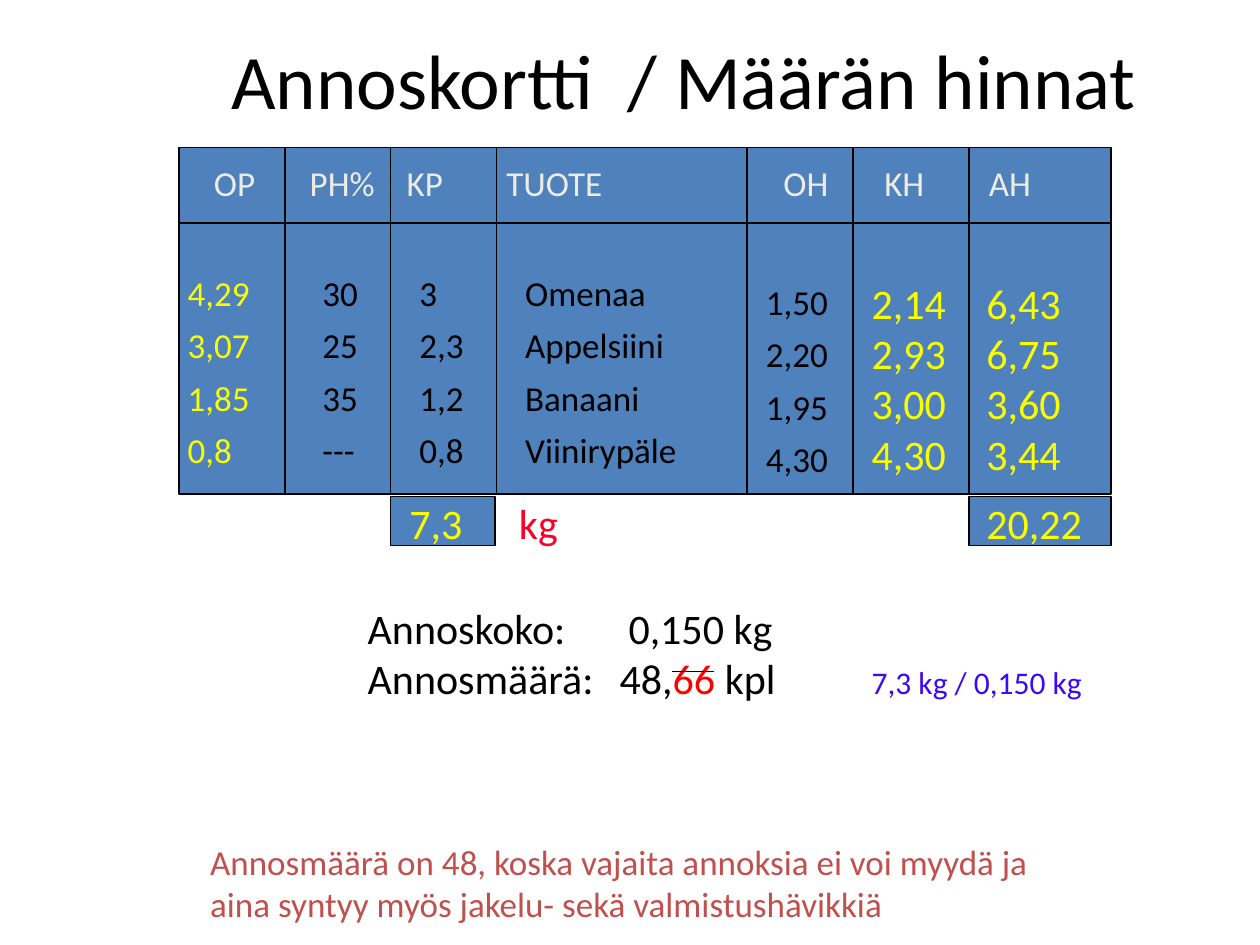
from lxml import etree
from pptx import Presentation
from pptx.dml.color import RGBColor
from pptx.enum import shapes, text
from pptx.oxml.ns import qn
from pptx.util import Inches, Pt

BLACK = RGBColor(0, 0, 0)
BLUE = RGBColor(0x4F, 0x81, 0xBD)
YELLOW = RGBColor(0xFA, 0xFD, 0x00)
CREAM = RGBColor(0xEE, 0xEC, 0xE1)
PINK = RGBColor(0xFC, 0x01, 0x28)
RED = RGBColor(0xFF, 0, 0)
VIOLET = RGBColor(0x3C, 0x09, 0xF5)
BRICK = RGBColor(0xC0, 0x50, 0x4D)

TITLE = "Annoskortti  / Määrän hinnat"
HEADS = ["OP", "PH%", "KP", "TUOTE", "OH", "KH", "AH"]
HEAD_TABS = [0.76, 1.53, 2.32, 4.52, 5.32, 6.15]

# box (left, top, width, height), size, colour, line spacing, values
COLUMNS = [
    ((1.39, 2.02, 0.82, 1.76), 20, YELLOW, 1.25, ["4,29", "3,07", "1,85", "0,8"]),
    ((2.46, 2.02, 0.48, 1.78), 20, BLACK, 1.25, ["30", "25", "35", "---"]),
    ((3.23, 2.02, 0.55, 1.78), 20, BLACK, 1.25, ["3", "2,3", "1,2", "0,8"]),
    ((4.07, 2.02, 1.46, 1.76), 20, BLACK, 1.25,
     ["Omenaa", "Appelsiini", "Banaani", "Viinirypäle"]),
    ((5.98, 2.09, 0.7, 1.75), 20, BLACK, 1.25, ["1,50", "2,20", "1,95", "4,30"]),
    ((6.82, 2.15, 0.79, 1.71), 24, YELLOW, 1, ["2,14", "2,93", "3,00", "4,30"]),
    ((7.73, 2.15, 0.79, 1.71), 24, YELLOW, 1, ["6,43", "6,75", "3,60", "3,44"]),
]
# a line is a string, or a list of (text, colour, size) runs
TOTAL = [[("7,3", YELLOW, 24), ("\tkg", PINK, 24)]]
PORTIONS = [
    "Annoskoko:\t0,150 kg",
    [("Annosmäärä:\t48,", BLACK, 24), ("66", RED, 24), (" kpl\t", BLACK, 24),
     ("7,3 kg / 0,150 kg", VIOLET, 18)],
]
NOTE = ["Annosmäärä on 48, koska vajaita annoksia ei voi myydä ja",
        "aina syntyy myös jakelu- sekä valmistushävikkiä"]

LEFT, TOP, RIGHT, BASE = 1.42, 1.17, 8.82, 3.92
RULES = [2.26, 3.1, 3.94, 5.93, 6.77, 7.69]
SUMS = [(3.1, 0.83), (7.69, 1.13)]

prs = Presentation()
prs.slide_width, prs.slide_height = Inches(10), Inches(7.5)
slide = prs.slides.add_slide(prs.slide_layouts[6])


def style(font, size, color):
    font.name, font.size = "Calibri", Pt(size)
    font.color.rgb = color


def add_tabs(para, stops):
    tabs = etree.SubElement(para._p.get_or_add_pPr(), qn("a:tabLst"))
    for stop in stops:
        etree.SubElement(tabs, qn("a:tab"), pos=str(Inches(stop)), algn="l")


def add_text(box, lines, size, color, space=None, tabs=()):
    """Add a text box; tabs holds one list of stops for each line."""
    shape = slide.shapes.add_textbox(*map(Inches, box))
    frame = shape.text_frame
    frame.word_wrap = bool(tabs)
    for i, line in enumerate(lines):
        para = frame.add_paragraph() if i else frame.paragraphs[0]
        para.line_spacing = space
        if tabs:
            add_tabs(para, tabs[i])
        if isinstance(line, str):
            para.text = line
            style(para.font, size, color)
            continue
        for words, tint, points in line:
            run = para.add_run()
            run.text = words
            style(run.font, points, tint)
    return frame


def add_box(x, y, w, h):
    box = slide.shapes.add_shape(shapes.MSO_SHAPE.RECTANGLE,
                                 *map(Inches, (x, y, w, h)))
    box.shadow.inherit = False
    box.fill.solid()
    box.fill.fore_color.rgb = BLUE
    box.line.color.rgb, box.line.width = BLACK, Pt(1)


def add_line(x1, y1, x2, y2):
    line = slide.shapes.add_connector(shapes.MSO_CONNECTOR.STRAIGHT,
                                      *map(Inches, (x1, y1, x2, y2)))
    line.line.color.rgb, line.line.width = BLACK, Pt(1)
    etree.SubElement(line._element.spPr, qn("a:effectLst"))


title = add_text((1.21, 0, 8.44, 1.25), [TITLE], 44, BLACK)
title.word_wrap = True
title.vertical_anchor = text.MSO_ANCHOR.MIDDLE
title.paragraphs[0].alignment = text.PP_ALIGN.CENTER

add_box(LEFT, TOP, RIGHT - LEFT, BASE - TOP)
add_line(LEFT, 1.77, RIGHT, 1.77)
for x in RULES:
    add_line(x, TOP, x, BASE)
for x, width in SUMS:
    add_box(x, 3.94, width, 0.39)

add_text((1.6, 1.23, 7.2, 0.43), ["\t".join(HEADS)], 20, CREAM, tabs=[HEAD_TABS])
for box, size, color, space, values in COLUMNS:
    add_text(box, values, size, color, space)

add_text((7.73, 3.9, 0.96, 0.5), ["20,22"], 24, YELLOW)
add_text((3.15, 3.9, 1.39, 0.5), TOTAL, 24, YELLOW, tabs=[[0.87]])
add_text((2.82, 4.73, 5.93, 0.91), PORTIONS, 24, BLACK, tabs=[[2.07], [2, 4]])
add_line(5.67, 5.33, 5.33, 5.33)
add_text((1.57, 6.62, 6.73, 0.76), NOTE, 20, BRICK)

prs.save("out.pptx")
